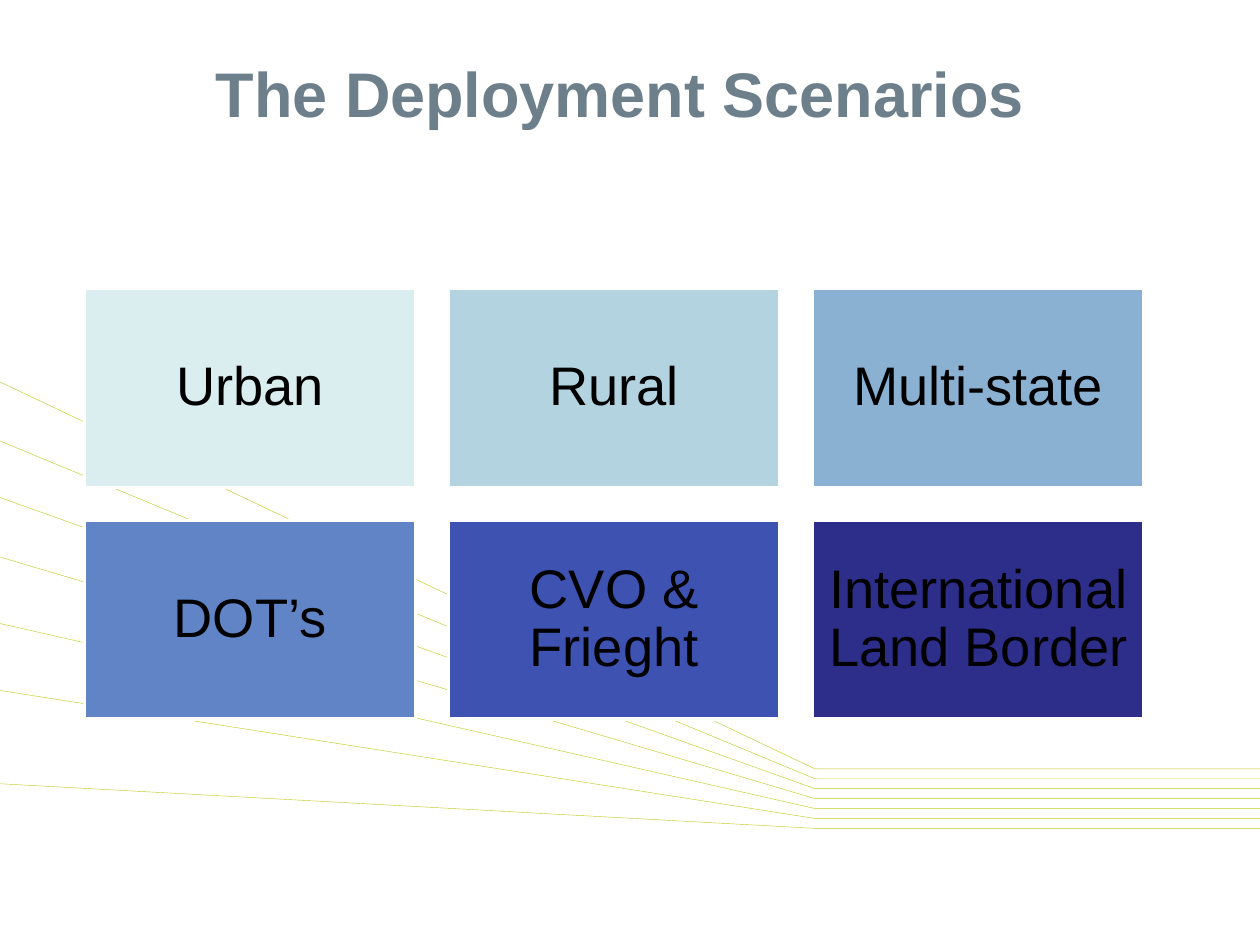
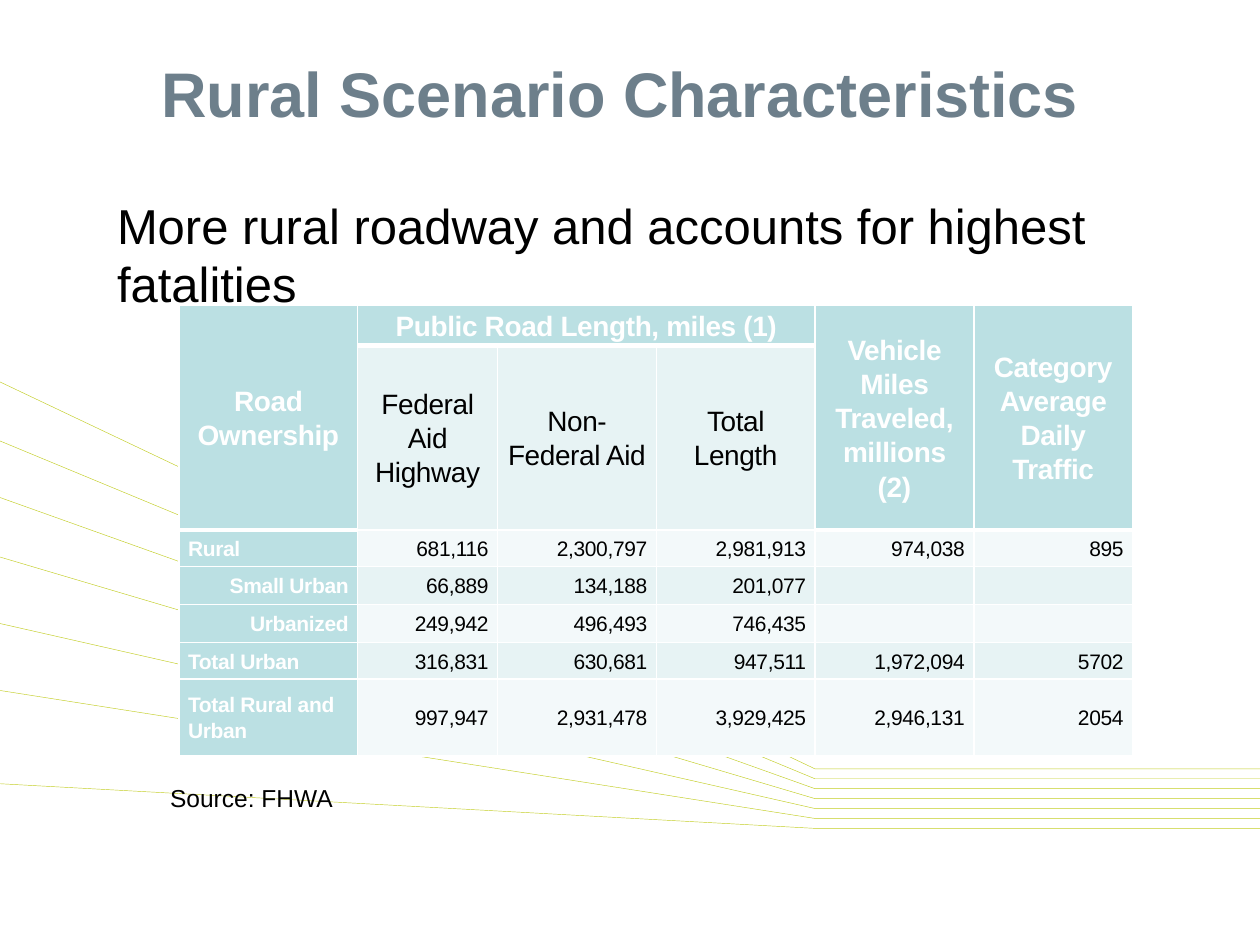
"""Build two slides on deployment scenarios: a grid of scenarios and a table of rural road data."""
import lxml.etree
import pptx
import pptx.dml.color
import pptx.enum.text
import pptx.oxml.ns
import pptx.util

Cm = pptx.util.Cm
Pt = pptx.util.Pt
ALIGN = pptx.enum.text.PP_ALIGN
MIDDLE = pptx.enum.text.MSO_ANCHOR.MIDDLE
BLACK, WHITE, SLATE, LIME = "000000", "FFFFFF", "6D7F8B", "C2CD23"
HEADER_FILL, BAND_FILLS = "BBE0E3", ["F3F9FA", "E7F3F4"]


def color(hex_value):
    """Turn a hex string into a colour."""
    return pptx.dml.color.RGBColor.from_string(hex_value)


def write(frame, text, size, hex_value=BLACK, bold=False, **paragraph_format):
    """Fill a text frame with one formatted paragraph."""
    frame.word_wrap = True
    frame.text = text
    paragraph = frame.paragraphs[0]
    for name, value in paragraph_format.items():
        setattr(paragraph, name, value)
    for run in paragraph.runs:
        for name, value in {"name": "Arial", "size": Pt(size), "bold": bold}.items():
            setattr(run.font, name, value)
        run.font.color.rgb = color(hex_value)


presentation = pptx.Presentation()
presentation.slide_width = Cm(25.4)
presentation.slide_height = Cm(19.05)
title_only = presentation.slide_layouts[5]

slides = []
for title_text in ["The Deployment Scenarios", "Rural Scenario Characteristics"]:
    slide = presentation.slides.add_slide(title_only)
    title = slide.shapes.title
    for name, value in {"left": 1.07, "top": 0.97, "width": 22.86, "height": 1.78}.items():
        setattr(title, name, Cm(value))
    write(title.text_frame, title_text, 36, SLATE, True, alignment=ALIGN.CENTER)
    title.text_frame.vertical_anchor = MIDDLE
    title.text_frame.auto_size = pptx.enum.text.MSO_AUTO_SIZE.NONE
    slides.append(slide)
scenario_slide, rural_slide = slides

# The fan of lines belongs to the slide master, so both slides show it.
for index, start in enumerate([7.7, 8.89, 10.03, 11.23, 12.57, 13.92, 15.8]):
    end = Cm(15.5 + 0.2 * index)
    builder = scenario_slide.shapes.build_freeform(0, Cm(start))
    builder.add_line_segments([(Cm(16.43), end), (Cm(25.4), end)], close=False)
    fan_line = builder.convert_to_shape()
    fan_line.shadow.inherit = False
    fan_line.fill.background()
    fan_line.line.color.rgb = color(LIME)
    fan_line.line.width = Pt(0.25)
    fan_line.element.xpath("./p:nvSpPr/p:cNvPr")[0].set("id", str(20 + index))
    presentation.slide_master.shapes.element.append(fan_line.element)

scenarios = [
    ("Urban", "DAEDEF"), ("Rural", "B3D3E0"), ("Multi-state", "8AB1D2"),
    ("DOT’s", "6084C5"), ("CVO & Frieght", "3D52B1"), ("International Land Border", "2D2D8A"),
]
box_width, box_height, gap = 6.68, 4.01, 0.66
for index, (scenario, fill) in enumerate(scenarios):
    row, column = divmod(index, 3)
    box = scenario_slide.shapes.add_shape(
        pptx.enum.shapes.MSO_SHAPE.RECTANGLE,
        Cm(1.7 + column * (box_width + gap)), Cm(5.82 + row * (box_height + gap)),
        Cm(box_width), Cm(box_height))
    box.shadow.inherit = False
    box.fill.solid()
    box.fill.fore_color.rgb = color(fill)
    box.line.color.rgb = color(WHITE)
    box.line.width = Pt(2)
    write(box.text_frame, scenario, 31, alignment=ALIGN.CENTER, line_spacing=0.9)
    box.text_frame.vertical_anchor = MIDDLE
    for side in ["left", "top", "right", "bottom"]:
        setattr(box.text_frame, f"margin_{side}", Cm(0.3))

for text, size, position in [
    ("More rural roadway and accounts for highest fatalities", 28, (2.11, 3.81, 20.96, 3.84)),
    ("Source: FHWA", 14, (3.18, 15.67, 7.62, 0.86)),
]:
    text_box = rural_slide.shapes.add_textbox(*map(Cm, position))
    write(text_box.text_frame, text, size)

road_rows = [
    ["Road Ownership", "Public Road Length, miles (1)", "", "",
     "Vehicle Miles Traveled, millions (2)", "Category\vAverage Daily Traffic"],
    ["", "Federal Aid Highway", "Non-Federal Aid", "Total Length", "", ""],
    ["Rural", "681,116", "2,300,797", "2,981,913", "974,038", "895"],
    ["Small Urban", "66,889", "134,188", "201,077", "", ""],
    ["Urbanized", "249,942", "496,493", "746,435", "", ""],
    ["Total Urban", "316,831", "630,681", "947,511", "1,972,094", "5702"],
    ["Total Rural and Urban", "997,947", "2,931,478", "3,929,425", "2,946,131", "2054"],
]
column_widths = [3.6, 2.82] + [3.2] * 4
row_heights = [0.81, 3.7] + [0.74] * 4 + [1.55]
tall_columns = [0, 4, 5]
table_frame = rural_slide.shapes.add_table(
    len(row_heights), len(column_widths), Cm(3.61), Cm(6.15),
    Cm(sum(column_widths)), Cm(sum(row_heights)))
table = table_frame.table
table.first_row = table.horz_banding = False
for column, width in zip(table.columns, column_widths):
    column.width = Cm(width)
for row, height in zip(table.rows, row_heights):
    row.height = Cm(height)

for row, values in enumerate(road_rows):
    for column, text in enumerate(values):
        cell = table.cell(row, column)
        is_heading = row == 0 or column == 0 or (row == 1 and column in tall_columns)
        cell.fill.solid()
        cell.fill.fore_color.rgb = color(HEADER_FILL if is_heading else BAND_FILLS[row % 2])
        for name, value in {"margin_left": Cm(0.18), "margin_right": Cm(0.18), "margin_top": 0,
                            "margin_bottom": 0, "vertical_anchor": MIDDLE}.items():
            setattr(cell, name, value)
        if not text:
            continue
        if row < 2:
            alignment = ALIGN.CENTER
        elif column > 0 or text in ["Small Urban", "Urbanized"]:
            alignment = ALIGN.RIGHT
        else:
            alignment = ALIGN.LEFT
        write(cell.text_frame, text, 16 if row < 2 else 12, WHITE if is_heading else BLACK,
              is_heading, alignment=alignment, line_spacing=1.1)

for run_properties in table_frame.element.xpath(".//a:rPr"):
    run_properties.set("spc", "-20")
for index, cell_properties in enumerate(table_frame.element.xpath(".//a:tcPr")):
    row, column = divmod(index, len(column_widths))
    thick = row == 0 or (row == 1 and column in tall_columns)
    sides = {"lnL": 1, "lnR": 1, "lnT": 1, "lnB": 3 if thick else 1}
    if row > 0:
        del sides["lnT"]
    for place, (side, width) in enumerate(sides.items()):
        border = lxml.etree.Element(pptx.oxml.ns.qn(f"a:{side}"), w=str(Pt(width)))
        fill = lxml.etree.SubElement(border, pptx.oxml.ns.qn("a:solidFill"))
        lxml.etree.SubElement(fill, pptx.oxml.ns.qn("a:srgbClr"), val=WHITE)
        cell_properties.insert(place, border)
for column in tall_columns:
    table.cell(0, column).merge(table.cell(1, column))
table.cell(0, 1).merge(table.cell(0, 3))

presentation.save("out.pptx")
